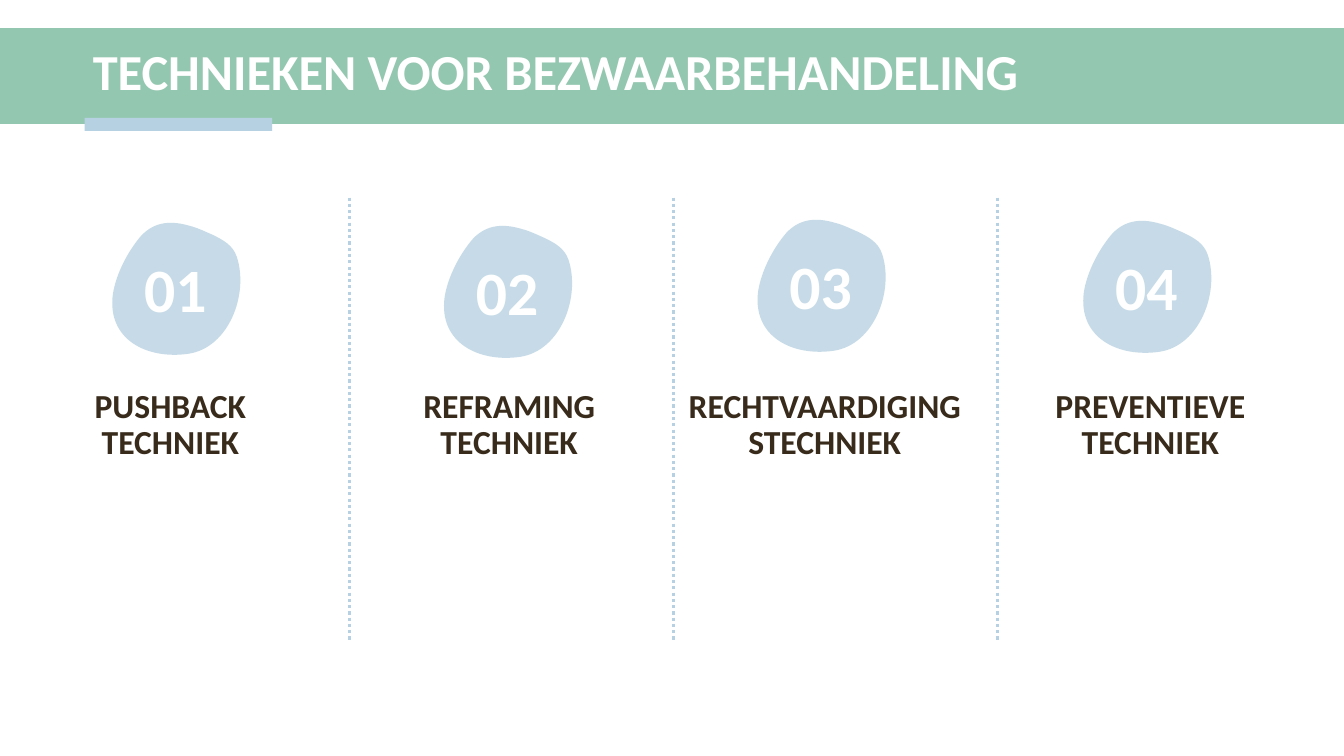
from dataclasses import dataclass

from lxml import etree
from pptx import Presentation
from pptx.dml.color import RGBColor
from pptx.enum.dml import MSO_LINE
from pptx.enum.shapes import MSO_CONNECTOR, MSO_SHAPE
from pptx.enum.text import MSO_ANCHOR, MSO_AUTO_SIZE, PP_ALIGN
from pptx.oxml.ns import qn
from pptx.util import Inches, Pt


@dataclass(frozen=True)
class Theme:
    font: str = "Calibri"
    green: RGBColor = RGBColor(0x94, 0xC7, 0xB0)
    blue: RGBColor = RGBColor(0xB6, 0xD1, 0xE1)
    brown: RGBColor = RGBColor(0x38, 0x2B, 0x1B)
    white: RGBColor = RGBColor(0xFF, 0xFF, 0xFF)
    title_size: Pt = Pt(36)
    number_size: Pt = Pt(44)
    heading_size: Pt = Pt(24)


THEME = Theme()

# Heading, heading left, blob left and blob top, in inches
TECHNIQUES = [
    ("PUSHBACK TECHNIEK", 0.23, 1.11, 2.21),
    ("REFRAMING TECHNIEK", 3.59, 4.4, 2.24),
    ("RECHTVAARDIGINGSTECHNIEK", 6.72, 7.51, 2.18),
    ("PREVENTIEVE TECHNIEK", 9.95, 10.74, 2.19),
]

# Cubic curves of the blob: two control points and an end point each
BLOB_SIZE = (1.27, 1.31)
BLOB_START = (0.77, 0.03)
BLOB_CURVES = [
    ((0.6, -0.02), (0.43, -0.02), (0.29, 0.13)),
    ((0.16, 0.28), (0.04, 0.51), (0.01, 0.71)),
    ((-0.05, 1.16), (0.35, 1.36), (0.76, 1.3)),
    ((1.16, 1.24), (1.36, 0.71), (1.24, 0.34)),
    ((1.2, 0.22), (1.1, 0.17), (1, 0.12)),
    ((0.93, 0.09), (0.85, 0.05), (0.77, 0.03)),
]


def format_runs(p, size, color):
    for r in p.runs:
        r.font.name = THEME.font
        r.font.size = size
        r.font.bold = True
        r.font.color.rgb = color


def paint(sp, color):
    sp.shadow.inherit = False
    sp.fill.solid()
    sp.fill.fore_color.rgb = color
    sp.line.fill.background()


def add_bar(slide, left, top, width, height, color):
    sp = slide.shapes.add_shape(MSO_SHAPE.RECTANGLE, Inches(left), Inches(top),
                                Inches(width), Inches(height))
    paint(sp, color)


def add_title(slide, text):
    sp = slide.shapes.title
    sp.left, sp.top = Inches(0.82), Inches(0.34)
    sp.width, sp.height = Inches(11.93), Inches(0.79)
    tf = sp.text_frame
    tf.text = text
    tf.auto_size = MSO_AUTO_SIZE.NONE
    tf.vertical_anchor = MSO_ANCHOR.MIDDLE
    p = tf.paragraphs[0]
    p.alignment = PP_ALIGN.LEFT
    p.line_spacing = 0.9
    format_runs(p, THEME.title_size, THEME.white)
    # Bring the title in front of the band
    slide.shapes._spTree.append(sp._element)


def add_label(slide, text, box, size, color, line_spacing):
    sp = slide.shapes.add_textbox(*(Inches(v) for v in box))
    tf = sp.text_frame
    tf.word_wrap = True
    tf.text = text
    p = tf.paragraphs[0]
    p.alignment = PP_ALIGN.CENTER
    p.line_spacing = Pt(line_spacing)
    format_runs(p, size, color)


def add_path_step(path, tag, points=()):
    step = etree.SubElement(path, qn(tag))
    for x, y in points:
        pt = etree.SubElement(step, qn("a:pt"))
        pt.set("x", str(Inches(x)))
        pt.set("y", str(Inches(y)))


def add_blob(slide, left, top):
    """Size a freeform by its diagonal, then give it the curved outline."""
    builder = slide.shapes.build_freeform(0, 0)
    builder.add_line_segments([tuple(Inches(v) for v in BLOB_SIZE)])
    sp = builder.convert_to_shape(Inches(left), Inches(top))
    path = next(sp._element.iter(qn("a:path")))
    for step in list(path):
        path.remove(step)
    add_path_step(path, "a:moveTo", [BLOB_START])
    for curve in BLOB_CURVES:
        add_path_step(path, "a:cubicBezTo", curve)
    add_path_step(path, "a:close")
    paint(sp, THEME.blue)
    color = sp._element.spPr.find(f"{qn('a:solidFill')}/{qn('a:srgbClr')}")
    etree.SubElement(color, qn("a:alpha")).set("val", "77000")


def add_divider(slide, x):
    line = slide.shapes.add_connector(MSO_CONNECTOR.STRAIGHT, Inches(x), Inches(1.96),
                                      Inches(x), Inches(6.35))
    line.line.color.rgb = THEME.blue
    line.line.width = Pt(2.25)
    line.line.dash_style = MSO_LINE.ROUND_DOT
    etree.SubElement(line._element.spPr, qn("a:effectLst"))


def add_technique(slide, number, heading, heading_left, blob_left, blob_top):
    add_label(slide, heading, (heading_left, 3.81, 2.92, 2.42),
              THEME.heading_size, THEME.brown, 25.8)
    add_blob(slide, blob_left, blob_top)
    add_label(slide, f"{number:02}", (blob_left, blob_top + 0.64, 1.26, 1.05),
              THEME.number_size, THEME.white, 23.4)


def main():
    prs = Presentation()
    prs.slide_width, prs.slide_height = Inches(13.33), Inches(7.5)
    slide = prs.slides.add_slide(prs.slide_layouts[5])

    add_bar(slide, 0, 0.28, 13.33, 0.95, THEME.green)
    add_bar(slide, 0.84, 1.17, 1.86, 0.13, THEME.blue)
    add_title(slide, "TECHNIEKEN VOOR BEZWAARBEHANDELING")
    for number, technique in enumerate(TECHNIQUES, start=1):
        add_technique(slide, number, *technique)
    for i in range(3):
        add_divider(slide, 3.47 + i * 3.21)

    prs.save("out.pptx")


if __name__ == "__main__":
    main()
